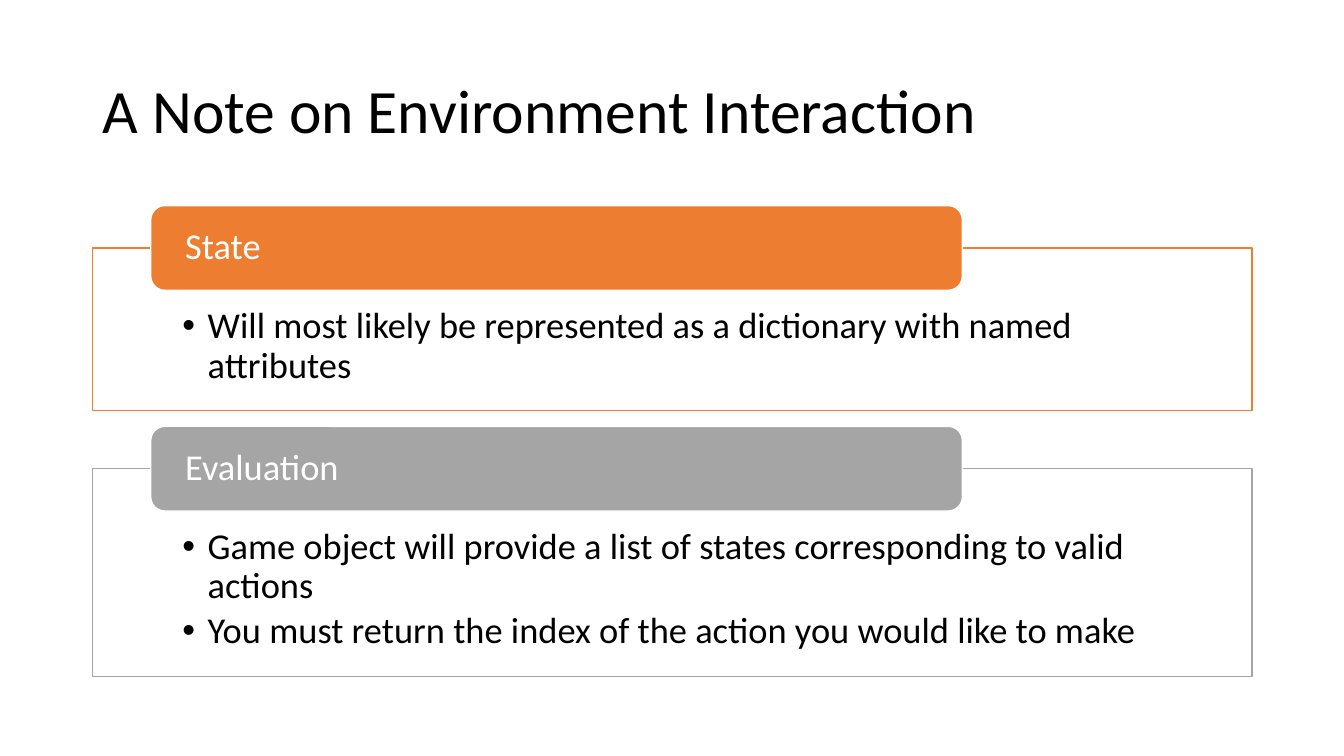
from dataclasses import dataclass

from lxml.etree import SubElement
from pptx import Presentation
from pptx.dml.color import RGBColor
from pptx.enum.shapes import MSO_SHAPE
from pptx.enum.text import MSO_ANCHOR, MSO_AUTO_SIZE, PP_ALIGN
from pptx.oxml.ns import qn
from pptx.util import Inches, Pt


@dataclass(frozen=True)
class Theme:
    font: str = "Calibri"
    title_size: int = 44
    text_size: int = 26
    ink: str = "000000"
    paper: str = "FFFFFF"
    orange: str = "ED7D31"
    grey: str = "A5A5A5"


THEME = Theme()

# Grid: one hundred columns by one hundred rows
WIDTH, HEIGHT = Inches(13.33), Inches(7.5)
COLUMN, ROW = WIDTH / 100, HEIGHT / 100
LEFT, SPAN = 6.9, 86.27
TITLE_TOP, TITLE_ROWS = 5.33, 19.33
FIRST_TOP, GAP_ROWS, TAB_ROWS = 32.8, 7.73, 11.2
TAB_INDENT, TAB_SHARE = 0.05, 0.7

# Heading, accent colour, panel rows, points
SECTIONS = [
    ("State", THEME.orange, 21.47, [
        "Will most likely be represented as a dictionary with named attributes",
    ]),
    ("Evaluation", THEME.grey, 27.47, [
        "Game object will provide a list of states corresponding to valid actions",
        "You must return the index of the action you would like to make",
    ]),
]


def apply_format(target, values):
    for name, value in values.items():
        setattr(target, name, value)


def place(element, left, top, columns, rows):
    apply_format(element, {
        "left": round(left * COLUMN), "top": round(top * ROW),
        "width": round(columns * COLUMN), "height": round(rows * ROW),
    })


def paint(element, fill, line):
    element.fill.solid()
    element.fill.fore_color.rgb = RGBColor.from_string(fill)
    element.line.color.rgb = RGBColor.from_string(line)
    element.line.width = Pt(1)


def write(frame, lines, size, color, anchor, margins=None, space_after=0):
    apply_format(frame, {"word_wrap": True, "auto_size": MSO_AUTO_SIZE.NONE,
                         "vertical_anchor": anchor})
    for side, inches in (margins or {}).items():
        setattr(frame, f"margin_{side}", Inches(inches))
    frame.text = "\n".join(lines)
    for paragraph in frame.paragraphs:
        apply_format(paragraph, {
            "alignment": PP_ALIGN.LEFT, "line_spacing": 0.9,
            "space_before": Pt(0), "space_after": Pt(space_after),
        })
        for run in paragraph.runs:
            apply_format(run.font, {"name": THEME.font, "size": Pt(size)})
            run.font.color.rgb = RGBColor.from_string(color)


def add_title(slide, wording):
    title = slide.shapes.title
    place(title, LEFT, TITLE_TOP, SPAN, TITLE_ROWS)
    write(title.text_frame, [wording], THEME.title_size, THEME.ink,
          MSO_ANCHOR.MIDDLE)


def fill_panel(panel, top, rows, accent, points):
    place(panel, LEFT, top, SPAN, rows)
    paint(panel, THEME.paper, accent)
    # Slightly translucent panel
    tint = panel.fill._xPr.find(qn("a:solidFill"))[0]
    SubElement(tint, qn("a:alpha"), val="90000")
    write(panel.text_frame, points, THEME.text_size, THEME.ink, MSO_ANCHOR.TOP,
          {"left": 0.89, "top": 0.59, "right": 0.89, "bottom": 0.2}, 3.9)
    # Hanging indent for the bullets
    for point in panel.text_frame.paragraphs:
        properties = point._p.get_or_add_pPr()
        properties.set("marL", str(Inches(0.25)))
        properties.set("indent", str(-Inches(0.25)))


def add_tab(slide, panel_top, accent, heading):
    tab = slide.shapes.add_shape(MSO_SHAPE.ROUNDED_RECTANGLE, 0, 0, 0, 0)
    place(tab, LEFT + TAB_INDENT * SPAN, panel_top - TAB_ROWS / 2,
          TAB_SHARE * SPAN, TAB_ROWS)
    tab.shadow.inherit = False
    paint(tab, accent, THEME.paper)
    write(tab.text_frame, [heading], THEME.text_size, THEME.paper,
          MSO_ANCHOR.MIDDLE, {"left": 0.3, "top": 0, "right": 0.3, "bottom": 0})


def main():
    deck = Presentation()
    apply_format(deck, {"slide_width": WIDTH, "slide_height": HEIGHT})
    two_content = deck.slide_layouts.get_by_name("Two Content")
    slide = deck.slides.add_slide(two_content)
    title, *panels = slide.placeholders

    add_title(slide, "A Note on Environment Interaction")

    # Each section is a bulleted panel with a tab over its top edge
    top = FIRST_TOP
    for panel, (heading, accent, rows, points) in zip(panels, SECTIONS):
        fill_panel(panel, top, rows, accent, points)
        add_tab(slide, top, accent, heading)
        top += rows + GAP_ROWS

    deck.save("out.pptx")


if __name__ == "__main__":
    main()
